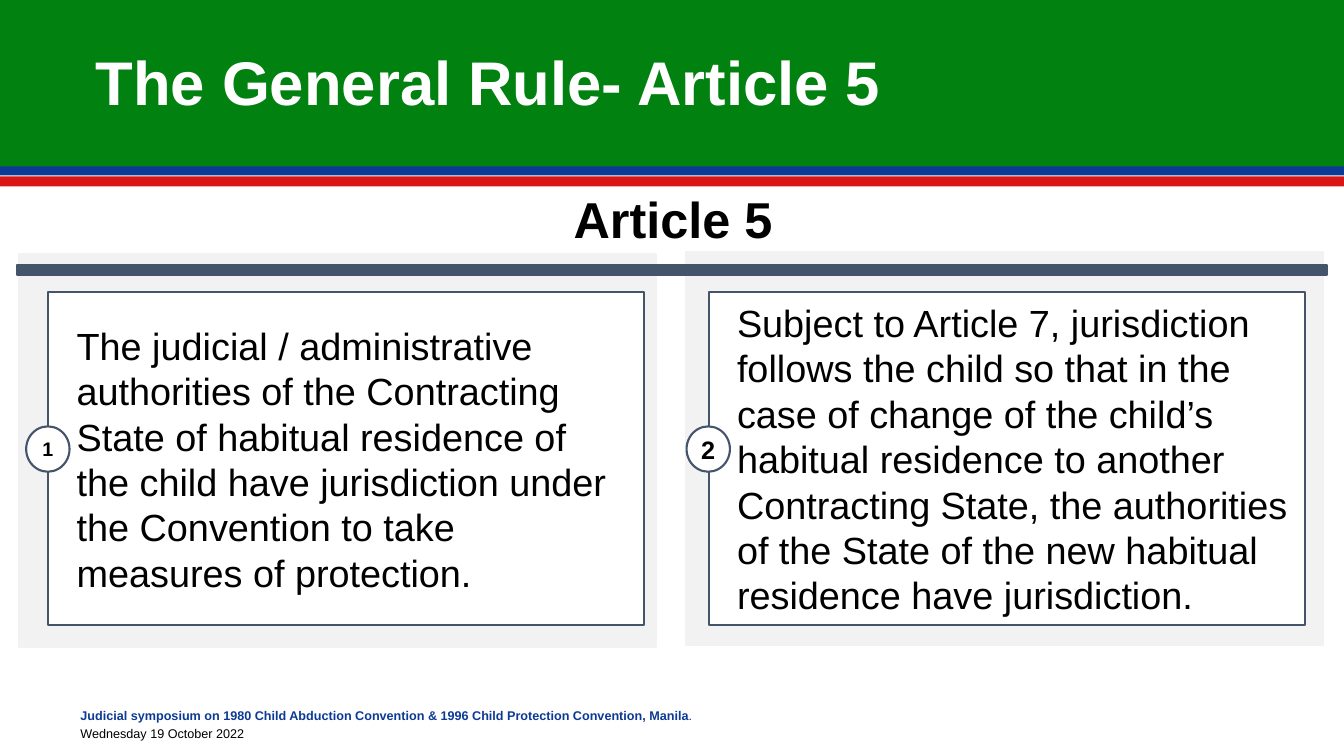
from pptx import Presentation
from pptx.dml.color import RGBColor
from pptx.enum.shapes import MSO_SHAPE as Shape
from pptx.enum.text import MSO_ANCHOR as Anchor, PP_ALIGN as Align
from pptx.util import Inches, Pt

COLORS = {
    "white": "FFFFFF", "black": "000000", "green": "018110", "blue": "0D3A96",
    "red": "D81616", "slate": "44546A", "panel": "F2F2F2",
}


class SlideBuilder:
    """Holds the style and the current slide."""

    font = "Arial"

    def __init__(self, slide):
        self.slide = slide

    def color(self, name):
        return RGBColor.from_string(COLORS[name])

    def box(self, left, top, width, height, fill, line=None, kind=Shape.RECTANGLE):
        shape = self.slide.shapes.add_shape(
            kind, Inches(left), Inches(top), Inches(width), Inches(height))
        shape.shadow.inherit = False
        shape.fill.solid()
        shape.fill.fore_color.rgb = self.color(fill)
        if line:
            shape.line.color.rgb = self.color(line)
            shape.line.width = Pt(1.5)
        else:
            shape.line.fill.background()
        return shape

    def text_box(self, left, top, width, height):
        return self.slide.shapes.add_textbox(
            Inches(left), Inches(top), Inches(width), Inches(height))

    def set_text(self, shape, text, size, color="black", bold=False, align=Align.LEFT,
                 anchor=Anchor.MIDDLE, spacing=1.0, insets=(0.1, 0.1)):
        frame = shape.text_frame
        frame.text = text
        frame.word_wrap = True
        frame.vertical_anchor = anchor
        frame.margin_left, frame.margin_right = map(Inches, insets)
        for paragraph in frame.paragraphs:
            paragraph.alignment = align
            paragraph.line_spacing = spacing
            for run in paragraph.runs:
                run.font.name = self.font
                run.font.size = Pt(size)
                run.font.bold = bold
                run.font.color.rgb = self.color(color)
        return frame

    def rule_card(self, left, number, number_size, text):
        card = self.box(left, 2.9, 5.91, 3.3, "white", "slate")
        self.set_text(card, text, 27, insets=(0.28, 0.16))
        badge = self.box(left - 0.22, 4.23, 0.43, 0.45, "white", "slate", Shape.OVAL)
        self.set_text(badge, number, number_size, bold=True, align=Align.CENTER,
                      insets=(0, 0))


def main():
    presentation = Presentation()
    presentation.slide_width = Inches(13.33)
    presentation.slide_height = Inches(7.5)
    builder = SlideBuilder(presentation.slides.add_slide(presentation.slide_layouts[6]))

    # Header bands
    for top, height, fill in [(1.62, 0.12, "blue"), (0, 1.65, "green"), (1.75, 0.1, "red")]:
        builder.box(0, top, 13.33, height, fill)

    # Footer
    footer = builder.set_text(
        builder.text_box(0.7, 6.94, 8.87, 0.45),
        "Judicial symposium on 1980 Child Abduction Convention & 1996 Child Protection "
        "Convention, Manila\nWednesday 19 October 2022",
        9, anchor=Anchor.TOP, spacing=1.2)
    event = footer.paragraphs[0]
    event.runs[0].font.bold = True
    full_stop = event.add_run()
    full_stop.text = "."
    full_stop.font.name = builder.font
    full_stop.font.size = Pt(9)
    for run in event.runs:
        run.font.color.rgb = builder.color("blue")

    # Title and heading
    builder.set_text(builder.text_box(0.85, 0.12, 11.5, 1.45), "The General Rule- Article 5",
                     44, "white", bold=True, spacing=0.9)
    builder.set_text(builder.text_box(3.22, 1.82, 6.91, 0.71), "Article 5", 36, bold=True,
                     align=Align.CENTER, anchor=Anchor.TOP)

    # Panels and the bar across them
    for left, top in [(6.8, 2.5), (0.19, 2.52)]:
        builder.box(left, top, 6.32, 3.9, "panel", "panel")
    builder.box(0.17, 2.63, 12.99, 0.1, "slate", "slate")

    # Numbered rules
    builder.rule_card(
        0.48, "1", 14,
        "The judicial / administrative authorities of the Contracting State of habitual "
        "residence of the child have jurisdiction under the Convention to take measures "
        "of protection.")
    builder.rule_card(
        7.03, "2", 18,
        "Subject to Article 7, jurisdiction follows the child so that in the case of "
        "change of the child’s habitual residence to another Contracting State, the "
        "authorities of the State of the new habitual residence have jurisdiction.")

    presentation.save("out.pptx")


if __name__ == "__main__":
    main()
